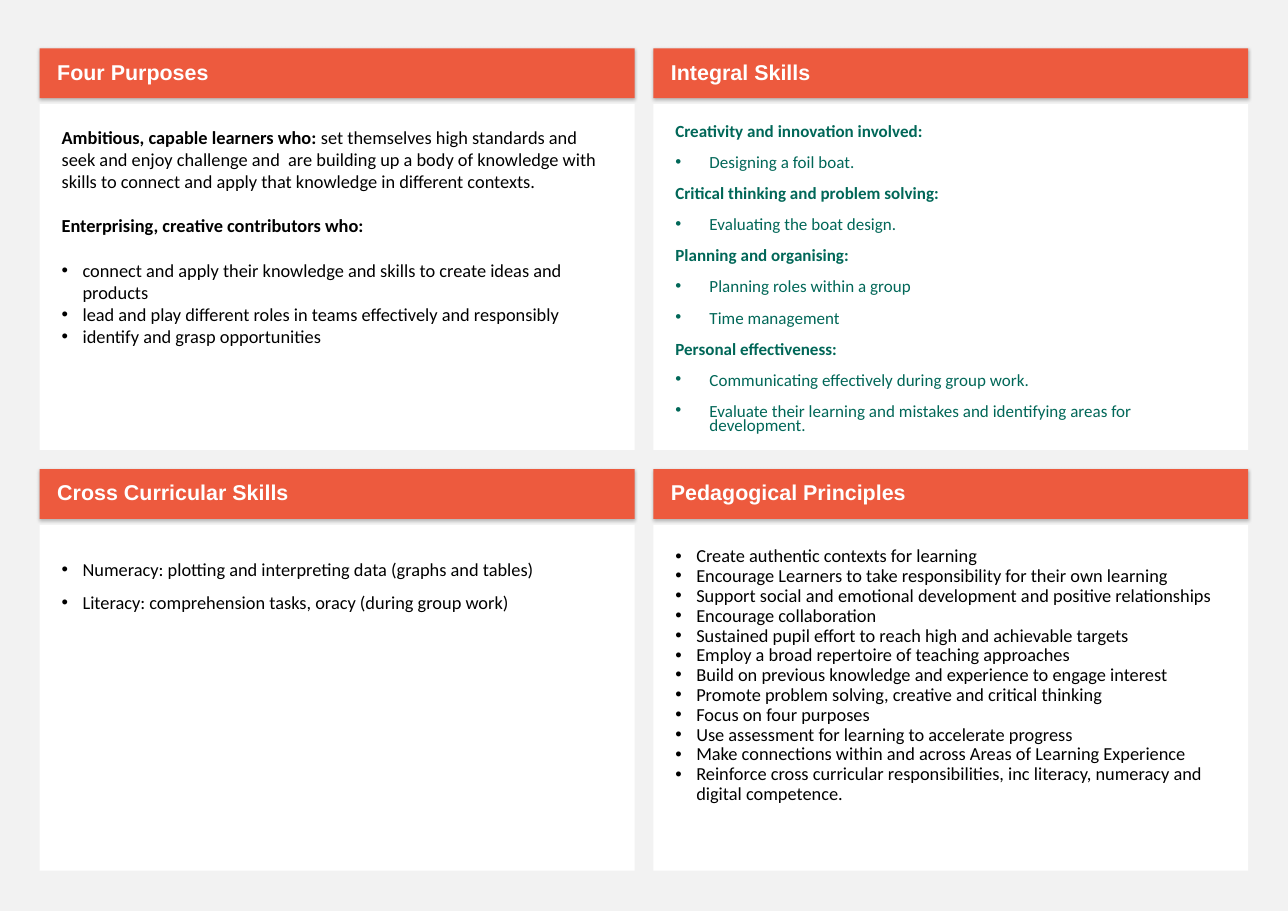
import pptx
import pptx.util
import pptx.dml.color
import pptx.enum.shapes
import pptx.enum.text
import pptx.oxml
from dataclasses import dataclass
from lxml import etree

Inches, Pt = pptx.util.Inches, pptx.util.Pt
NS = "http://schemas.openxmlformats.org/drawingml/2006/main"


@dataclass
class Theme:
    back: str = "F2F2F2"
    panel: str = "FFFFFF"
    bar: str = "ED5A3E"
    light: str = "FFFFFF"
    dark: str = "000000"
    green: str = "006758"
    head: str = "Arial"
    body: str = "Calibri"
    title: float = 14
    text: float = 12
    small: float = 11.1


class Deck:
    """Draws titled text panels on one slide in a shared theme."""

    def __init__(self, file, theme):
        self.theme = theme
        self.slide = file.slides.add_slide(file.slide_layouts[6])
        fill = self.slide.background.fill
        fill.solid()
        fill.fore_color.rgb = self.tint(theme.back)

    def tint(self, code):
        return pptx.dml.color.RGBColor.from_string(code)

    def box(self, left, top, high, fill, pads, anchor):
        kind = pptx.enum.shapes.MSO_SHAPE.RECTANGLE
        shape = self.slide.shapes.add_shape(
            kind, Inches(left), Inches(top), Inches(5.4), Inches(high))
        shape.shadow.inherit = False
        shape.fill.solid()
        shape.fill.fore_color.rgb = self.tint(fill)
        shape.line.fill.background()
        frame = shape.text_frame
        frame.word_wrap = True
        frame.vertical_anchor = anchor
        (frame.margin_left, frame.margin_top,
         frame.margin_right, frame.margin_bottom) = map(Inches, pads)
        return shape

    def shade(self, shape):
        effects = shape._element.spPr.find(f"{{{NS}}}effectLst")
        effects.append(etree.fromstring(
            f'<a:outerShdw xmlns:a="{NS}" blurRad="25400" dist="12700" dir="5400000">'
            '<a:srgbClr val="000000"><a:alpha val="25000"/></a:srgbClr></a:outerShdw>'))

    def para(self, frame, runs, font, size, color, pitch=1.0, gap=0, hang=0):
        line = frame.paragraphs[0]
        if line.runs:
            line = frame.add_paragraph()
        line.alignment = pptx.enum.text.PP_ALIGN.LEFT
        line.line_spacing = pitch
        line.space_before = Pt(gap)
        if hang:
            props = line._p.get_or_add_pPr()
            props.set("marL", str(Inches(hang)))
            props.set("indent", str(-Inches(hang)))
            props.append(etree.fromstring(f'<a:buFont xmlns:a="{NS}" typeface="Arial"/>'))
            props.append(etree.fromstring(f'<a:buChar xmlns:a="{NS}" char="•"/>'))
        for text, bold in runs:
            run = line.add_run()
            run.text = text
            run.font.name = font
            run.font.size = Pt(size)
            run.font.bold = bold
            run.font.color.rgb = self.tint(color)

    def header(self, left, top, text):
        look = self.theme
        bar = self.box(left, top, 0.45, look.bar, (0.16, 0.05, 0.1, 0.05),
                       pptx.enum.text.MSO_ANCHOR.MIDDLE)
        self.shade(bar)
        self.para(bar.text_frame, [(text, True)], look.head, look.title,
                  look.light, 0.9, 11)

    def panel(self, left, top, title, lines, size, color, pitch, hang):
        self.header(left, top, title)
        card = self.box(left, top + 0.505, 3.14, self.theme.panel, (0.2,) * 4,
                        pptx.enum.text.MSO_ANCHOR.TOP)
        for runs, gap, mark in lines:
            self.para(card.text_frame, runs, self.theme.body, size, color,
                      pitch, gap, hang if mark else 0)


def items(texts, gap=0):
    return [([(text, False)], gap, True) for text in texts]


def groups(pairs, gap):
    lines = []
    for name, texts in pairs:
        lines.append(([(name, True)], gap, False))
        lines += items(texts, gap)
    return lines


GAP = 14.6
PURPOSES = [
    ([("Ambitious, capable learners who: ", True),
      ("set themselves high standards and seek and enjoy challenge and  are building up "
       "a body of knowledge with skills to connect and apply that knowledge in different "
       "contexts.", False)], 0, False),
    ([("Enterprising, creative contributors who:", True)], GAP, False),
    *items(["connect and apply their knowledge and skills to create ideas and products"], GAP),
    *items(["lead and play different roles in teams effectively and responsibly",
            "identify and grasp opportunities"]),
]
SKILLS = groups([
    ("Creativity and innovation involved:", ["Designing a foil boat."]),
    ("Critical thinking and problem solving:", ["Evaluating the boat design."]),
    ("Planning and organising:", ["Planning roles within a group", "Time management"]),
    ("Personal effectiveness:", [
        "Communicating effectively during group work.",
        "Evaluate their learning and mistakes and identifying areas for development."]),
], 11)
CROSS = items([
    "Numeracy: plotting and interpreting data (graphs and tables)",
    "Literacy: comprehension tasks, oracy (during group work)",
])
RULES = items([
    "Create authentic contexts for learning",
    "Encourage Learners to take responsibility for their own learning",
    "Support social and emotional development and positive relationships",
    "Encourage collaboration",
    "Sustained pupil effort to reach high and achievable targets",
    "Employ a broad repertoire of teaching approaches",
    "Build on previous knowledge and experience to engage interest",
    "Promote problem solving, creative and critical thinking",
    "Focus on four purposes",
    "Use assessment for learning to accelerate progress",
    "Make connections within and across Areas of Learning Experience",
    "Reinforce cross curricular responsibilities, inc literacy, numeracy and "
    "digital competence.",
])


def main():
    file = pptx.Presentation()
    file.slide_width, file.slide_height = Inches(11.69), Inches(8.27)
    look = Theme()
    deck = Deck(file, look)
    panels = [
        ("Four Purposes", PURPOSES, look.text, look.dark, 1.0, 0.19),
        ("Integral Skills", SKILLS, look.small, look.green, 0.7, 0.31),
        ("Cross Curricular Skills", CROSS, look.text, look.dark, 1.5, 0.19),
        ("Pedagogical Principles", RULES, look.text, look.dark, 0.9, 0.19),
    ]
    for spot, panel in enumerate(panels):
        row, col = divmod(spot, 2)
        deck.panel(0.36 + 5.57 * col, 0.44 + 3.82 * row, *panel)
    file.save("out.pptx")


if __name__ == "__main__":
    main()
